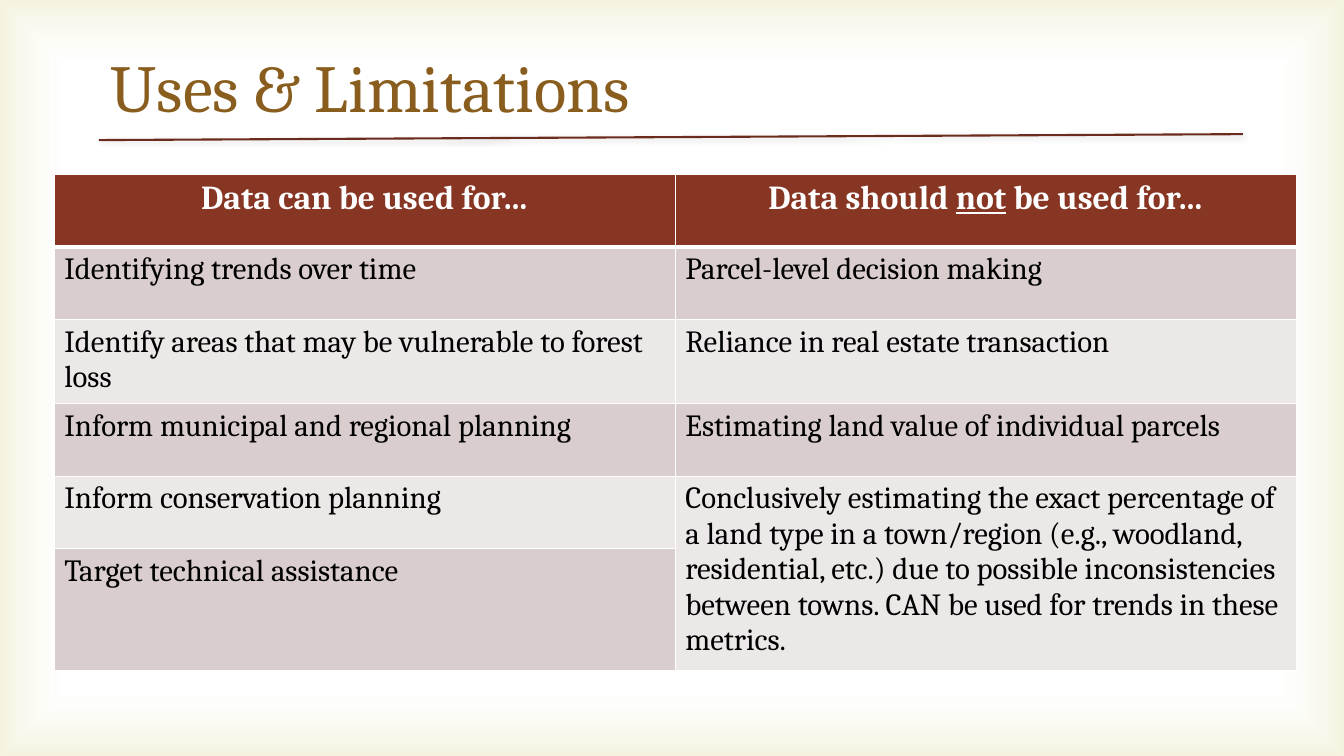
from pptx import Presentation
from pptx.dml.color import RGBColor
from pptx.enum.shapes import MSO_CONNECTOR, MSO_SHAPE
from pptx.enum.text import MSO_ANCHOR, PP_ALIGN
from pptx.oxml import parse_xml
from pptx.oxml.ns import nsdecls
from pptx.util import Cm, Pt

FONT = "Cambria"
COLORS = {
    "white": "FFFFFF",
    "black": "000000",
    "glow": "D1CA75",
    "title": "895D1D",
    "rule": "6B2B1D",
    "header": "873624",
    "band_dark": "D9CECD",
    "band_light": "EDE8E8",
}
SLIDE_WIDTH, SLIDE_HEIGHT = Cm(33.87), Cm(19.05)

# Each heading is a list of (text, underlined) pieces
HEADINGS = [
    [("Data can be used for…", False)],
    [("Data should ", False), ("not", True), (" be used for…", False)],
]
USES = [
    "Identifying trends over time",
    "Identify areas that may be vulnerable to forest loss",
    "Inform municipal and regional planning",
    "Inform conservation planning",
    "Target technical assistance",
]
LIMITATIONS = [
    "Parcel-level decision making",
    "Reliance in real estate transaction",
    "Estimating land value of individual parcels",
    "Conclusively estimating the exact percentage of a land type in a "
    "town/region (e.g., woodland, residential, etc.) due to possible "
    "inconsistencies between towns. CAN be used for trends in these metrics.",
]


def rgb(name):
    return RGBColor.from_string(COLORS[name])


def style_run(run, size, color, bold=False, underline=False):
    run.font.name = FONT
    run.font.size = Pt(size)
    run.font.color.rgb = rgb(color)
    run.font.bold = bold
    if underline:
        run.font.underline = True


def add_glow(slide):
    """Cover the slide with a faint glow along its edges."""
    glow = slide.shapes.add_shape(
        MSO_SHAPE.RECTANGLE, 0, 0, SLIDE_WIDTH, SLIDE_HEIGHT)
    glow.shadow.inherit = False
    glow.line.fill.background()
    gradient = parse_xml(
        f'<a:gradFill {nsdecls("a")} rotWithShape="1"><a:gsLst>'
        f'<a:gs pos="83000"><a:srgbClr val="{COLORS["white"]}">'
        '<a:alpha val="11000"/></a:srgbClr></a:gs>'
        f'<a:gs pos="100000"><a:srgbClr val="{COLORS["glow"]}">'
        '<a:alpha val="23000"/></a:srgbClr></a:gs></a:gsLst>'
        '<a:path path="rect"><a:fillToRect l="50000" t="50000" '
        'r="50000" b="50000"/></a:path></a:gradFill>')
    glow.element.spPr.prstGeom.addnext(gradient)


def add_title_rule(slide):
    rule = slide.shapes.add_connector(
        MSO_CONNECTOR.STRAIGHT, Cm(2.49), Cm(3.53), Cm(31.32), Cm(3.38))
    rule.line.color.rgb = rgb("rule")
    rule.line.width = Pt(1.5)
    rule.element.spPr.append(parse_xml(
        f'<a:effectLst {nsdecls("a")}>'
        f'<a:outerShdw blurRad="{Pt(3)}" dist="{Pt(1)}" dir="5400000">'
        f'<a:srgbClr val="{COLORS["black"]}"><a:alpha val="15000"/>'
        '</a:srgbClr></a:outerShdw></a:effectLst>'))


def add_title(slide, text):
    title = slide.shapes.add_textbox(Cm(2.54), Cm(0.71), Cm(28.73), Cm(2.92))
    frame = title.text_frame
    frame.word_wrap = True
    frame.vertical_anchor = MSO_ANCHOR.MIDDLE
    frame.text = text
    style_run(frame.paragraphs[0].runs[0], 48, "title")


def style_cell(cell, fill, bottom_width=1):
    """Fill a cell and give it white borders."""
    cell.fill.solid()
    cell.fill.fore_color.rgb = rgb(fill)
    properties = cell._tc.get_or_add_tcPr()
    widths = {"L": 1, "R": 1, "T": 1, "B": bottom_width}
    for position, (side, width) in enumerate(widths.items()):
        properties.insert(position, parse_xml(
            f'<a:ln{side} {nsdecls("a")} w="{Pt(width)}"><a:solidFill>'
            f'<a:srgbClr val="{COLORS["white"]}"/></a:solidFill>'
            f'</a:ln{side}>'))


def fill_heading(cell, pieces):
    style_cell(cell, "header", bottom_width=3)
    paragraph = cell.text_frame.paragraphs[0]
    paragraph.alignment = PP_ALIGN.CENTER
    for text, underline in pieces:
        run = paragraph.add_run()
        run.text = text
        style_run(run, 24, "white", bold=True, underline=underline)


def fill_entry(cell, text):
    cell.text_frame.text = text
    style_run(cell.text_frame.paragraphs[0].runs[0], 22, "black", bold=False)


def add_comparison(slide):
    row_count = len(USES) + 1
    column_width, row_height = Cm(15.65), Cm(1.83)
    comparison = slide.shapes.add_table(
        row_count, 2, Cm(1.37), Cm(4.39),
        2 * column_width, row_count * row_height).table

    for column, pieces in enumerate(HEADINGS):
        fill_heading(comparison.cell(0, column), pieces)

    # Alternating bands, then the entries of each column
    for row in range(1, row_count):
        for column in range(2):
            style_cell(comparison.cell(row, column),
                       "band_dark" if row % 2 else "band_light")
    for column, entries in enumerate([USES, LIMITATIONS]):
        for row, text in enumerate(entries, start=1):
            fill_entry(comparison.cell(row, column), text)

    # The last limitation spans the remaining rows
    comparison.cell(len(LIMITATIONS), 1).merge(
        comparison.cell(row_count - 1, 1))


def main():
    presentation = Presentation()
    presentation.slide_width = SLIDE_WIDTH
    presentation.slide_height = SLIDE_HEIGHT
    slide = presentation.slides.add_slide(presentation.slide_layouts[6])

    add_glow(slide)
    add_title_rule(slide)
    add_title(slide, "Uses & Limitations")
    add_comparison(slide)

    presentation.save("out.pptx")


if __name__ == "__main__":
    main()
